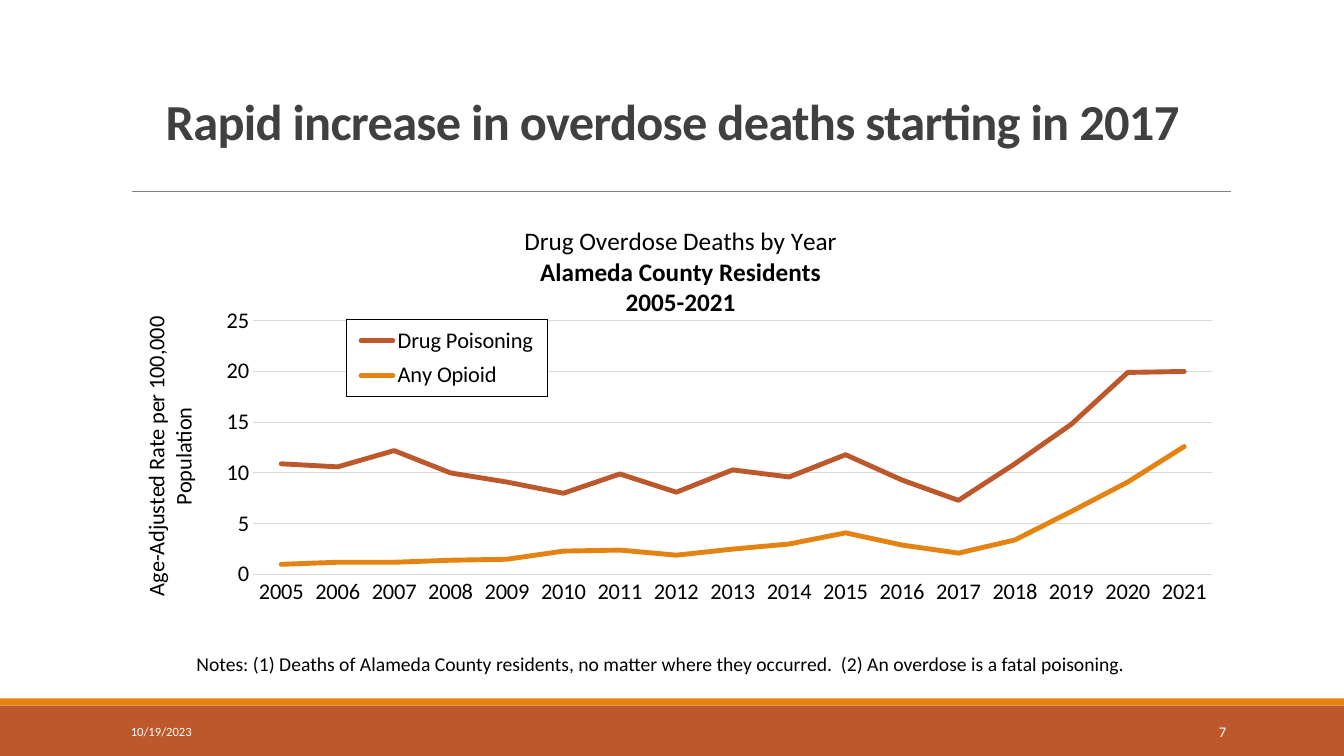
import pptx
import pptx.chart.data
import pptx.dml.color
import pptx.enum.chart
import pptx.enum.shapes
import pptx.enum.text
import pptx.oxml
import pptx.util
from pptx.util import Inches

TITLE = "Rapid increase in overdose deaths starting in 2017"
CHART_TITLE = [
    ("Drug Overdose Deaths by Year", False),
    ("Alameda County Residents", True),
    ("2005-2021", True),
]
AXIS_TITLE = "Age-Adjusted Rate per 100,000 Population"
YEARS = [str(year) for year in range(2005, 2022)]
RATES = {
    "Drug Poisoning": [10.9, 10.6, 12.2, 10, 9.1, 8, 9.9, 8.1, 10.3,
                       9.6, 11.8, 9.3, 7.3, 10.9, 14.8, 19.9, 20],
    "Any Opioid": [1, 1.2, 1.2, 1.4, 1.5, 2.3, 2.4, 1.9, 2.5,
                   3, 4.1, 2.9, 2.1, 3.4, 6.2, 9.1, 12.6],
}
NOTES = ("Notes: (1) Deaths of Alameda County residents, no matter where they occurred."
         "  (2) An overdose is a fatal poisoning.")
DATE = "10/19/2023"
PAGE = "7"

THEME = {
    "font": "Calibri",
    "rust": "BD582C", "orange": "E48312", "heading": "404040", "rule": "808080",
    "grid": "D9D9D9", "black": "000000", "white": "FFFFFF",
    "title": 36, "chart_title": 18, "chart": 16, "notes": 14, "page": 10.5, "date": 9,
}
SLIDE_WIDTH, SLIDE_HEIGHT = 13.33, 7.5
FOOTER_TOP, STRIPE_HEIGHT = 7, 0.07
PLOT_LAYOUT = (0.111, 0.258, 0.873, 0.579)
LEGEND_LAYOUT = (0.196, 0.256, 0.183, 0.175)


def color(name):
    return pptx.dml.color.RGBColor.from_string(THEME[name])


def style_font(font, size, color_name, bold=False):
    font.name = THEME["font"]
    font.size = pptx.util.Pt(THEME[size])
    font.bold = bold
    font.color.rgb = color(color_name)


def style_line(line, color_name, width):
    line.color.rgb = color(color_name)
    line.width = pptx.util.Pt(width)


def add_band(slide, top, height, color_name):
    band = slide.shapes.add_shape(
        pptx.enum.shapes.MSO_SHAPE.RECTANGLE,
        0, Inches(top), Inches(SLIDE_WIDTH), Inches(height))
    band.shadow.inherit = False
    band.fill.solid()
    band.fill.fore_color.rgb = color(color_name)
    band.line.fill.background()


def add_rule(slide):
    rule = slide.shapes.add_connector(
        pptx.enum.shapes.MSO_CONNECTOR.STRAIGHT,
        Inches(1.31), Inches(1.9), Inches(12.21), Inches(1.9))
    style_line(rule.line, "rule", 0.5)
    properties = rule.line._get_or_add_ln().getparent()
    properties.append(pptx.oxml.parse_xml(
        '<a:effectLst xmlns:a="http://schemas.openxmlformats.org/drawingml/2006/main"/>'))


def add_text(slide, text, box, size, color_name, align="LEFT", anchor="MIDDLE"):
    shape = slide.shapes.add_textbox(*map(Inches, box))
    frame = shape.text_frame
    frame.word_wrap = True
    frame.vertical_anchor = pptx.enum.text.MSO_ANCHOR[anchor]
    frame.text = text
    paragraph = frame.paragraphs[0]
    paragraph.alignment = pptx.enum.text.PP_ALIGN[align]
    style_font(paragraph.runs[0].font, size, color_name)


def format_title(slide):
    title = slide.shapes.title
    title.left, title.top, title.width, title.height = map(Inches, (1.17, 0.93, 11, 0.62))
    frame = title.text_frame
    frame.text = TITLE
    frame.word_wrap = True
    frame.auto_size = pptx.enum.text.MSO_AUTO_SIZE.NONE
    frame.vertical_anchor = pptx.enum.text.MSO_ANCHOR.MIDDLE
    paragraph = frame.paragraphs[0]
    paragraph.alignment = pptx.enum.text.PP_ALIGN.CENTER
    paragraph.line_spacing = 0.85
    font = paragraph.runs[0].font
    style_font(font, "title", "heading", bold=True)
    font._element.set("spc", "-50")


def chart_xml(tag, content):
    return pptx.oxml.parse_xml(
        f'<c:{tag} xmlns:c="http://schemas.openxmlformats.org/drawingml/2006/chart"'
        f' xmlns:a="http://schemas.openxmlformats.org/drawingml/2006/main">{content}</c:{tag}>')


def manual_layout(fractions, inner=False):
    target = '<c:layoutTarget val="inner"/>' if inner else ""
    modes = "".join(f'<c:{axis}Mode val="edge"/>' for axis in "xy")
    values = "".join(f'<c:{name} val="{value}"/>' for name, value in zip("xywh", fractions))
    return chart_xml("layout", f"<c:manualLayout>{target}{modes}{values}</c:manualLayout>")


def remove_layout(element):
    for layout in element.xpath("./c:layout"):
        element.remove(layout)


def format_legend(chart):
    chart.has_legend = True
    legend = chart.legend
    legend.position = pptx.enum.chart.XL_LEGEND_POSITION.BOTTOM
    legend.include_in_layout = False
    style_font(legend.font, "chart", "black")
    element = legend._element
    remove_layout(element)
    overlay = element.xpath("./c:overlay")[0]
    overlay.addprevious(manual_layout(LEGEND_LAYOUT))
    overlay.addnext(chart_xml(
        "spPr", f'<a:solidFill><a:srgbClr val="{THEME["white"]}"/></a:solidFill>'
                f'<a:ln w="9525"><a:solidFill><a:srgbClr val="{THEME["black"]}"/>'
                '</a:solidFill></a:ln>'))


def format_axes(chart):
    for axis in (chart.category_axis, chart.value_axis):
        axis.major_tick_mark = pptx.enum.chart.XL_TICK_MARK.NONE
        axis.minor_tick_mark = pptx.enum.chart.XL_TICK_MARK.NONE
        style_font(axis.tick_labels.font, "chart", "black")
    style_line(chart.category_axis.format.line, "grid", 0.75)
    value_axis = chart.value_axis
    value_axis.minimum_scale, value_axis.maximum_scale, value_axis.major_unit = 0, 25, 5
    value_axis.tick_labels.number_format = "#,##0"
    value_axis.tick_labels.number_format_is_linked = False
    value_axis.format.line.fill.background()
    style_line(value_axis.major_gridlines.format.line, "grid", 0.75)
    frame = value_axis.axis_title.text_frame
    frame.text = AXIS_TITLE
    style_font(frame.paragraphs[0].runs[0].font, "chart", "black")


def add_rate_chart(slide):
    data = pptx.chart.data.CategoryChartData()
    data.categories = YEARS
    for name, values in RATES.items():
        data.add_series(name, values)
    chart = slide.shapes.add_chart(
        pptx.enum.chart.XL_CHART_TYPE.LINE,
        *map(Inches, (1.3, 2.06, 10.9, 4.35)), data).chart
    style_font(chart.font, "chart", "black")
    chart.has_title = True
    frame = chart.chart_title.text_frame
    frame.text = "\n".join(text for text, bold in CHART_TITLE)
    for paragraph, (text, bold) in zip(frame.paragraphs, CHART_TITLE):
        style_font(paragraph.runs[0].font, "chart_title", "black", bold)
    plot = chart.plots[0]
    plot.vary_by_categories = False
    for series, color_name in zip(plot.series, ("rust", "orange")):
        series.smooth = False
        series.marker.style = pptx.enum.chart.XL_MARKER_STYLE.NONE
        style_line(series.format.line, color_name, 3.5)
        series.format.line._get_or_add_ln().set("cap", "rnd")
    format_axes(chart)
    format_legend(chart)
    plot_area = chart._chartSpace.xpath("./c:chart/c:plotArea")[0]
    remove_layout(plot_area)
    plot_area.insert(0, manual_layout(PLOT_LAYOUT, inner=True))


def main():
    presentation = pptx.Presentation()
    presentation.slide_width = Inches(SLIDE_WIDTH)
    presentation.slide_height = Inches(SLIDE_HEIGHT)
    slide = presentation.slides.add_slide(presentation.slide_layouts[5])
    format_title(slide)
    add_band(slide, FOOTER_TOP, SLIDE_HEIGHT - FOOTER_TOP, "rust")
    add_band(slide, FOOTER_TOP - STRIPE_HEIGHT, STRIPE_HEIGHT, "orange")
    add_rule(slide)
    add_text(slide, DATE, (1.2, 7.06, 2.7, 0.4), "date", "white")
    add_text(slide, PAGE, (10.83, 7.06, 1.43, 0.4), "page", "white", align="RIGHT")
    add_rate_chart(slide)
    add_text(slide, NOTES, (1.85, 6.42, 10.7, 0.34), "notes", "black", anchor="TOP")
    presentation.save("out.pptx")


if __name__ == "__main__":
    main()
